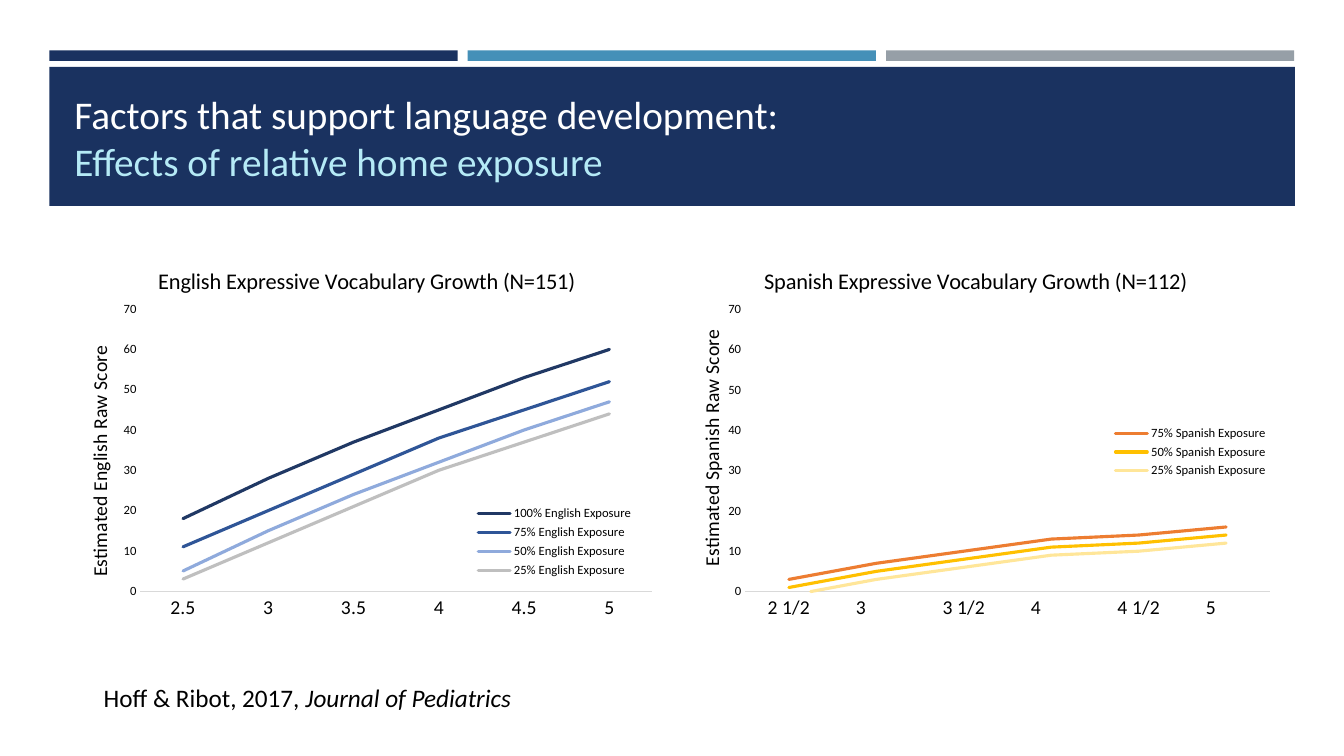
from dataclasses import dataclass

from lxml import etree
from pptx import Presentation
from pptx.chart.data import CategoryChartData
from pptx.dml.color import RGBColor
from pptx.enum.chart import XL_CHART_TYPE, XL_LEGEND_POSITION, XL_TICK_MARK
from pptx.enum.shapes import MSO_SHAPE
from pptx.enum.text import MSO_ANCHOR
from pptx.oxml.ns import qn
from pptx.util import Pt

LINE_CHART = XL_CHART_TYPE.LINE
LEGEND_RIGHT = XL_LEGEND_POSITION.RIGHT
NO_TICK = XL_TICK_MARK.NONE
RECTANGLE = MSO_SHAPE.RECTANGLE
BOTTOM, TOP = MSO_ANCHOR.BOTTOM, MSO_ANCHOR.TOP

FONT = "Calibri"
NAVY = RGBColor(0x1A, 0x32, 0x60)
BLUE = RGBColor(0x45, 0x90, 0xB8)
GRAY = RGBColor(0x96, 0x9F, 0xA7)
PALE_BLUE = RGBColor(0xB5, 0xEA, 0xF6)
WHITE = RGBColor(0xFF, 0xFF, 0xFF)
BLACK = RGBColor(0x00, 0x00, 0x00)
AXIS_GRAY = RGBColor(0xD9, 0xD9, 0xD9)
ENGLISH_100 = RGBColor(0x20, 0x38, 0x64)
ENGLISH_75 = RGBColor(0x2F, 0x55, 0x97)
ENGLISH_50 = RGBColor(0x8F, 0xAA, 0xDC)
ENGLISH_25 = RGBColor(0xBF, 0xBF, 0xBF)
SPANISH_75 = RGBColor(0xED, 0x7D, 0x31)
SPANISH_50 = RGBColor(0xFF, 0xC0, 0x00)
SPANISH_25 = RGBColor(0xFF, 0xE6, 0x99)

MARGIN = 35.3
STRIPE_WIDTH, STRIPE_STEP = 291.6, 298.8
CHART_TOP, CHART_WIDTH, CHART_HEIGHT = 175.7, 427, 285.8
AGES = (2.5, 3, 3.5, 4, 4.5, 5)


@dataclass
class Run:
    text: str
    color: RGBColor = BLACK
    italic: bool = False
    break_after: bool = False


@dataclass
class Exposure:
    percent: int
    scores: tuple
    color: RGBColor


@dataclass
class GrowthChart:
    """Layout tuples are fractions of the chart: x, y and, if given, width, height."""
    language: str
    sample: int
    left: float
    age_format: str
    title_layout: tuple
    axis_title_layout: tuple
    plot_layout: tuple
    legend_layout: tuple
    exposures: tuple


CHARTS = (
    GrowthChart("English", 151, 46.1, "General", (0.15, 0.04), (0.03, 0.24),
                (0.127, 0.158, 0.856, 0.705), (0.68, 0.64, 0.28, 0.2), (
                    Exposure(100, (18, 28, 37, 45, 53, 60), ENGLISH_100),
                    Exposure(75, (11, 20, 29, 38, 45, 52), ENGLISH_75),
                    Exposure(50, (5, 15, 24, 32, 40, 47), ENGLISH_50),
                    Exposure(25, (3, 12, 21, 30, 37, 44), ENGLISH_25))),
    GrowthChart("Spanish", 112, 487.4, "# ?/?", (0.13, 0.04), (0.02, 0.2),
                (0.105, 0.158, 0.878, 0.706), (0.71, 0.44, 0.28, 0.15), (
                    Exposure(75, (3, 7, 10, 13, 14, 16), SPANISH_75),
                    Exposure(50, (1, 5, 8, 11, 12, 14), SPANISH_50),
                    Exposure(25, (-1, 3, 6, 9, 10, 12), SPANISH_25))),
)


def style_font(font, size: float, color: RGBColor = BLACK, italic: bool = False) -> None:
    font.name, font.size, font.bold, font.italic = FONT, Pt(size), False, italic
    font.color.rgb = color


def add_bar(slide, left: float, top: float, width: float, height: float, color: RGBColor) -> None:
    shape = slide.shapes.add_shape(RECTANGLE, Pt(left), Pt(top), Pt(width), Pt(height))
    shape.shadow.inherit = False
    shape.fill.solid()
    shape.fill.fore_color.rgb = color
    shape.line.fill.background()


def add_text(slide, box: tuple, size: float, anchor, runs: tuple) -> None:
    frame = slide.shapes.add_textbox(*map(Pt, box)).text_frame
    frame.word_wrap = True
    frame.vertical_anchor = anchor
    paragraph = frame.paragraphs[0]
    for item in runs:
        run = paragraph.add_run()
        run.text = item.text
        style_font(run.font, size, item.color, item.italic)
        if item.break_after:
            paragraph.add_line_break()


def set_layout(element, index: int, fractions: tuple, inner: bool = False) -> None:
    """Give a chart part a manual layout, placed at the child index its schema needs."""
    for previous in element.findall(qn("c:layout")):
        element.remove(previous)
    layout = etree.Element(qn("c:layout"))
    manual = etree.SubElement(layout, qn("c:manualLayout"))
    settings = [("layoutTarget", "inner")] if inner else []
    settings += [("xMode", "edge"), ("yMode", "edge")]
    settings += zip("xywh", map(str, fractions))
    for name, value in settings:
        etree.SubElement(manual, qn(f"c:{name}")).set("val", value)
    element.insert(index, layout)


def set_chart_text(title, text: str, size: float, layout: tuple) -> None:
    run = title.text_frame.paragraphs[0].add_run()
    run.text = text
    style_font(run.font, size)
    set_layout(title._element, 1, layout)


def style_axes(chart, growth: GrowthChart) -> None:
    ages, scores = chart.category_axis, chart.value_axis
    for axis, size in ((ages, 14), (scores, 9)):
        axis.major_tick_mark = axis.minor_tick_mark = NO_TICK
        axis.has_major_gridlines = False
        style_font(axis.tick_labels.font, size)
    ages.tick_labels.number_format = growth.age_format
    ages.tick_labels.number_format_is_linked = False
    ages.format.line.color.rgb = AXIS_GRAY
    ages.format.line.width = Pt(0.75)
    scores.minimum_scale, scores.maximum_scale, scores.major_unit = 0, 70, 10
    scores.format.line.fill.background()
    set_chart_text(scores.axis_title, f"Estimated {growth.language} Raw Score", 14,
                   growth.axis_title_layout)
    body = scores.axis_title._element.xpath(".//a:bodyPr")[0]
    body.set("rot", "-5400000")
    body.set("vert", "horz")


def add_growth_chart(slide, growth: GrowthChart) -> None:
    data = CategoryChartData()
    data.categories = AGES
    data.categories.number_format = growth.age_format
    for exposure in growth.exposures:
        data.add_series(f"{exposure.percent}% {growth.language} Exposure", exposure.scores)
    chart = slide.shapes.add_chart(LINE_CHART, Pt(growth.left), Pt(CHART_TOP), Pt(CHART_WIDTH),
                                   Pt(CHART_HEIGHT), data).chart
    style_font(chart.font, 10)
    chart.has_title = True
    set_chart_text(chart.chart_title,
                   f"{growth.language} Expressive Vocabulary Growth (N={growth.sample})", 16,
                   growth.title_layout)
    style_axes(chart, growth)

    chart.has_legend = True
    chart.legend.position = LEGEND_RIGHT
    chart.legend.include_in_layout = False
    style_font(chart.legend.font, 9)
    set_layout(chart.legend._element, 1, growth.legend_layout)

    plot = chart.plots[0]
    plot.vary_by_categories = False
    set_layout(chart._chartSpace.chart.plotArea, 0, growth.plot_layout, inner=True)
    for series, exposure in zip(plot.series, growth.exposures):
        series.smooth = False
        line = series.format.line
        line.color.rgb = exposure.color
        line.width = Pt(2.25)
        line._get_or_add_ln().set("cap", "rnd")


def main() -> None:
    presentation = Presentation()
    presentation.slide_width, presentation.slide_height = Pt(960), Pt(540)
    slide = presentation.slides.add_slide(presentation.slide_layouts[6])
    for index, color in enumerate((NAVY, BLUE, GRAY)):
        add_bar(slide, MARGIN + index * STRIPE_STEP, 36, STRIPE_WIDTH, 7.5, color)
    add_bar(slide, MARGIN, 47.7, 889.7, 99.3, NAVY)
    add_text(slide, (46.1, 57.6, 868.3, 77.8), 28, BOTTOM, (
        Run("Factors that support language development:", WHITE, break_after=True),
        Run("Effects of relative home exposure", PALE_BLUE)))
    for growth in CHARTS:
        add_growth_chart(slide, growth)
    add_text(slide, (67, 483.8, 309, 51), 18, TOP, (
        Run("Hoff & Ribot, 2017, "),
        Run("Journal of Pediatrics", italic=True)))
    presentation.save("out.pptx")


if __name__ == "__main__":
    main()
